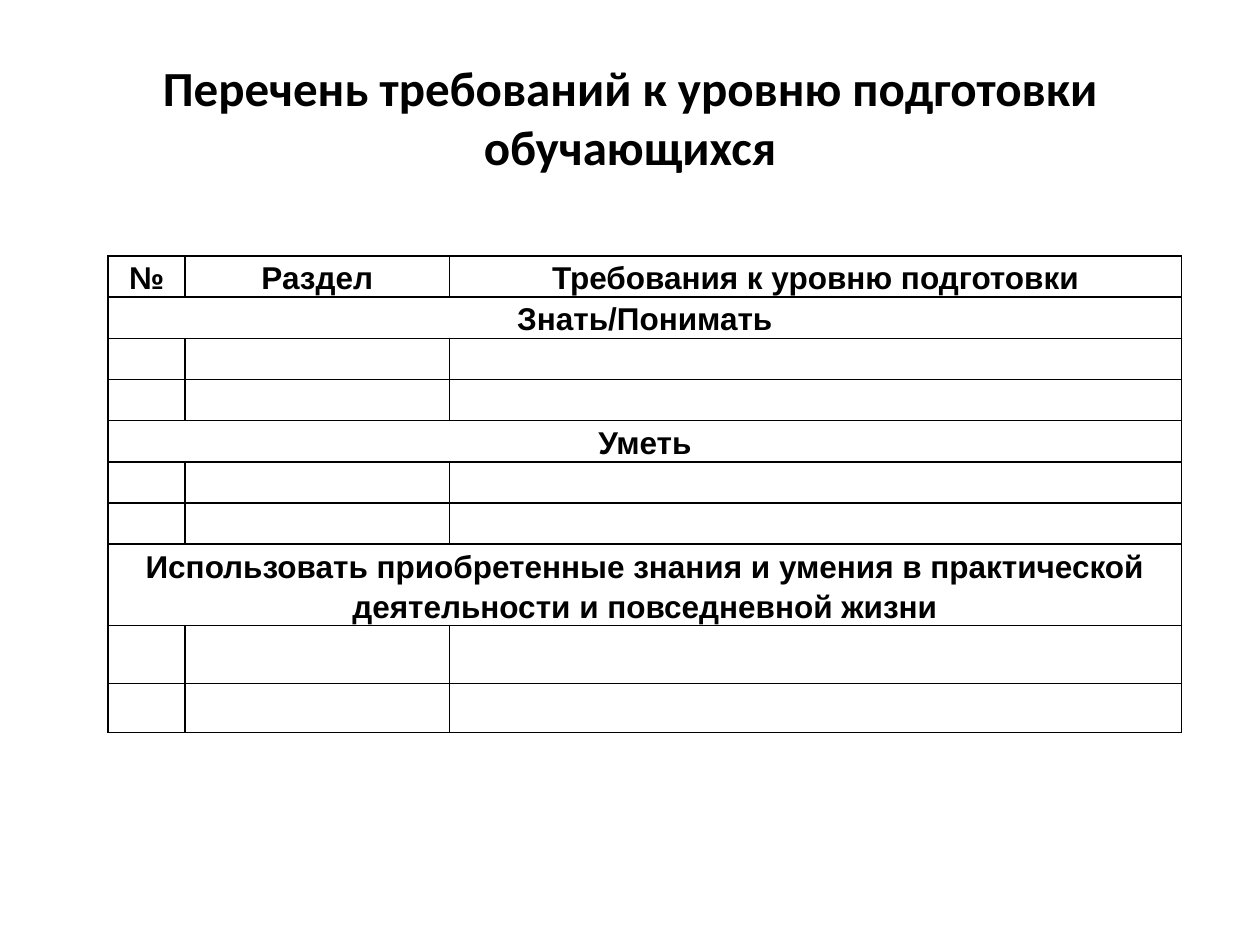
from lxml import etree
from pptx import Presentation
from pptx import util as u
from pptx.dml.color import RGBColor
from pptx.enum import text
from pptx.oxml.ns import qn

# Content: a one-item row spans the whole table
TITLE = "Перечень требований к уровню подготовки обучающихся"
BLANK = ("", "", "")
ROWS = [
    ("№", "Раздел", "Требования к уровню подготовки"),
    ("Знать/Понимать",), BLANK, BLANK,
    ("Уметь",), BLANK, BLANK,
    ("Использовать приобретенные знания и умения в практической "
     "деятельности и повседневной жизни",), BLANK, BLANK,
]
COL_WIDTHS = [1.55, 5.33, 14.76]
ROW_HEIGHTS = [0.83] * 7 + [1.47, 1.17, 0.99]
COLORS = {"ink": "000000", "paper": "FFFFFF"}


def set_font(p, name, size):
    p.alignment = text.PP_ALIGN.CENTER
    p.font.name, p.font.size, p.font.bold = name, u.Pt(size), True
    p.font.color.rgb = RGBColor.from_string(COLORS["ink"])


def set_borders(cell):
    tcPr = cell._tc.get_or_add_tcPr()
    for i, side in enumerate(("a:lnL", "a:lnR", "a:lnT", "a:lnB")):
        ln = etree.Element(qn(side), w=str(u.Pt(1)))
        fill = etree.SubElement(ln, qn("a:solidFill"))
        etree.SubElement(fill, qn("a:srgbClr"), val=COLORS["ink"])
        tcPr.insert(i, ln)


def format_cell(cell):
    cell.fill.solid()
    cell.fill.fore_color.rgb = RGBColor.from_string(COLORS["paper"])
    cell.margin_left = cell.margin_right = u.Cm(0.18)
    cell.margin_top = cell.margin_bottom = 0
    p = cell.text_frame.paragraphs[0]
    set_font(p, "Arial", 18)
    p.line_spacing = 1.15
    set_borders(cell)


prs = Presentation()
prs.slide_width, prs.slide_height = u.Cm(25.4), u.Cm(19.05)
s = prs.slides.add_slide(prs.slide_layouts[5])

# Title
title = s.shapes.title
title.left, title.top = u.Cm(1.27), u.Cm(0.76)
title.width, title.height = u.Cm(22.86), u.Cm(3.18)
tf = title.text_frame
tf.text = TITLE
tf.vertical_anchor = text.MSO_ANCHOR.MIDDLE
set_font(tf.paragraphs[0], "Calibri", 28)

# Requirements table
table = s.shapes.add_table(
    len(ROWS), len(COL_WIDTHS), u.Cm(2.18), u.Cm(5.16),
    u.Cm(sum(COL_WIDTHS)), u.Cm(sum(ROW_HEIGHTS))).table
table.first_row = table.horz_banding = False
for column, width in zip(table.columns, COL_WIDTHS):
    column.width = u.Cm(width)
for r, (values, height) in enumerate(zip(ROWS, ROW_HEIGHTS)):
    table.rows[r].height = u.Cm(height)
    for c, value in enumerate(values):
        table.cell(r, c).text = value
    for cell in table.rows[r].cells:
        format_cell(cell)
    if len(values) == 1:
        table.cell(r, 0).merge(table.cell(r, len(COL_WIDTHS) - 1))

prs.save("out.pptx")
